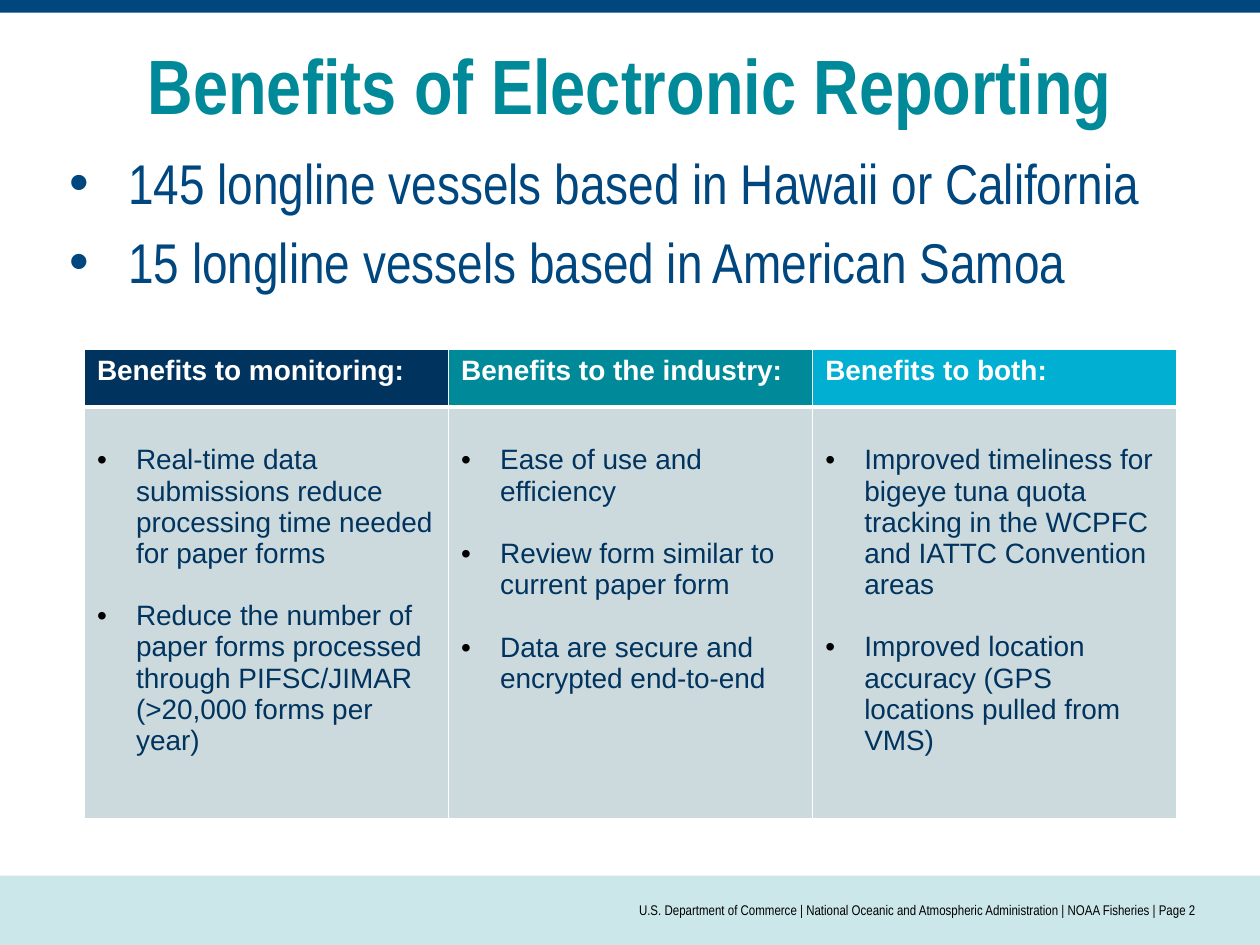
import pptx
import pptx.util
import pptx.dml.color
import pptx.enum.shapes
import pptx.enum.text
from dataclasses import dataclass
from lxml import etree
from pptx.oxml.ns import qn

Inches = pptx.util.Inches
Pt = pptx.util.Pt
ALIGN = pptx.enum.text.PP_ALIGN
ANCHOR = pptx.enum.text.MSO_ANCHOR


@dataclass(frozen=True)
class Theme:
    blue: str = "00467F"
    navy: str = "00345F"
    teal: str = "008998"
    cyan: str = "00AFD2"
    pale: str = "CCE7EA"
    grey: str = "CCDADD"
    white: str = "FFFFFF"
    black: str = "000000"
    sans: str = "Arial"
    slim: str = "Arial Narrow"
    head: int = 44
    body: int = 32
    cell: int = 16
    foot: int = 8


T = Theme()

COLUMNS = [
    ("Benefits to monitoring:", T.navy, [
        "Real-time data submissions reduce processing time needed for paper forms",
        "Reduce the number of paper forms processed through PIFSC/JIMAR "
        "(>20,000 forms per year)"]),
    ("Benefits to the industry:", T.teal, [
        "Ease of use and efficiency",
        "Review form similar to current paper form",
        "Data are secure and encrypted end-to-end"]),
    ("Benefits to both:", T.cyan, [
        "Improved timeliness for bigeye tuna quota tracking in the WCPFC "
        "and IATTC Convention areas",
        "Improved location accuracy (GPS locations pulled from VMS)"]),
]


def rgb(color):
    return pptx.dml.color.RGBColor.from_string(color)


def add_bullet(par, color, left, hang):
    props = par._p.get_or_add_pPr()
    props.set("marL", str(Inches(left)))
    props.set("indent", str(-Inches(hang)))
    tint = etree.SubElement(props, qn("a:buClr"))
    etree.SubElement(tint, qn("a:srgbClr"), val=color)
    etree.SubElement(props, qn("a:buFont"), typeface=T.sans)
    etree.SubElement(props, qn("a:buChar"), char="•")


def write(frame, lines, size, color, font=T.sans, bold=False,
          align=ALIGN.LEFT, gap=0, bullet=None):
    """Fill a frame; bullet is (color, left, hang), gap parts the paragraphs."""
    frame.word_wrap = True
    for i, line in enumerate(lines):
        par = frame.paragraphs[0] if i == 0 else frame.add_paragraph()
        if bullet:
            add_bullet(par, *bullet)
        par.alignment = align
        par.space_before = Pt(gap if i else 0)
        run = par.add_run()
        run.text = line
        run.font.size, run.font.name, run.font.bold = Pt(size), font, bold
        run.font.color.rgb = rgb(color)


def add_box(slide, box, pad, anchor=ANCHOR.TOP):
    frame = slide.shapes.add_textbox(*box).text_frame
    frame.margin_left = frame.margin_right = Inches(pad[0])
    frame.margin_top = frame.margin_bottom = Inches(pad[1])
    frame.vertical_anchor = anchor
    return frame


def add_band(slide, box, color):
    band = slide.shapes.add_shape(pptx.enum.shapes.MSO_SHAPE.RECTANGLE, *box)
    band.shadow.inherit = False
    band.fill.solid()
    band.fill.fore_color.rgb = rgb(color)
    band.line.fill.background()


def add_title(slide, box):
    write(add_box(slide, box, (0.1, 0.05)), ["Benefits of Electronic Reporting"],
          T.head, T.teal, font=T.slim, bold=True, align=ALIGN.CENTER)


def add_facts(slide, box):
    write(add_box(slide, box, (0.1, 0.1)),
          ["145 longline vessels based in Hawaii or California",
           "15 longline vessels based in American Samoa"],
          T.body, T.blue, font=T.slim, gap=6.4, bullet=(T.blue, 0.5, 0.47))


def style_cell(cell, color, base):
    props = cell._tc.get_or_add_tcPr()
    for side, width in (("L", 1), ("R", 1), ("T", 1), ("B", base)):
        line = etree.SubElement(props, qn("a:ln" + side), w=str(Pt(width)))
        fill = etree.SubElement(line, qn("a:solidFill"))
        etree.SubElement(fill, qn("a:srgbClr"), val=T.white)
    cell.fill.solid()
    cell.fill.fore_color.rgb = rgb(color)


def add_grid(slide, box):
    left, top, width, height = box
    table = slide.shapes.add_table(2, len(COLUMNS), *box).table
    table.rows[0].height = Inches(0.46)
    table.rows[1].height = height - Inches(0.46)
    for i, (name, color, points) in enumerate(COLUMNS):
        table.columns[i].width = int(width / len(COLUMNS))
        head, body = table.cell(0, i), table.cell(1, i)
        style_cell(head, color, 3)
        style_cell(body, T.grey, 1)
        write(head.text_frame, [name], T.cell, T.white, bold=True)
        body.margin_top = Inches(0.3)
        write(body.text_frame, points, T.cell, T.navy, gap=18,
              bullet=(T.black, 0.31, 0.31))


def add_footer(slide, box):
    left, top, width, height = box
    add_band(slide, box, T.pale)
    area = (left + Inches(2.5), top, width - Inches(3), height)
    write(add_box(slide, area, (0, 0.05), ANCHOR.MIDDLE),
          ["U.S. Department of Commerce | National Oceanic and Atmospheric "
           "Administration | NOAA Fisheries | Page 2"],
          T.foot, T.black, font=T.slim, align=ALIGN.RIGHT)


def area(*sides):
    return tuple(Inches(side) for side in sides)


def main():
    deck = pptx.Presentation()
    deck.slide_width, deck.slide_height = Inches(10), Inches(7.5)
    slide = deck.slides.add_slide(deck.slide_layouts[6])
    # Frame: footer and top band
    add_footer(slide, area(0, 6.95, 10, 0.55))
    add_band(slide, area(0, 0, 10, 0.1), T.blue)
    # Content
    add_title(slide, area(0.92, 0.25, 8.17, 1.15))
    add_grid(slide, area(0.67, 2.77, 8.67, 3.73))
    add_facts(slide, area(0.42, 1.08, 9, 2.6))
    deck.save("out.pptx")


if __name__ == "__main__":
    main()
